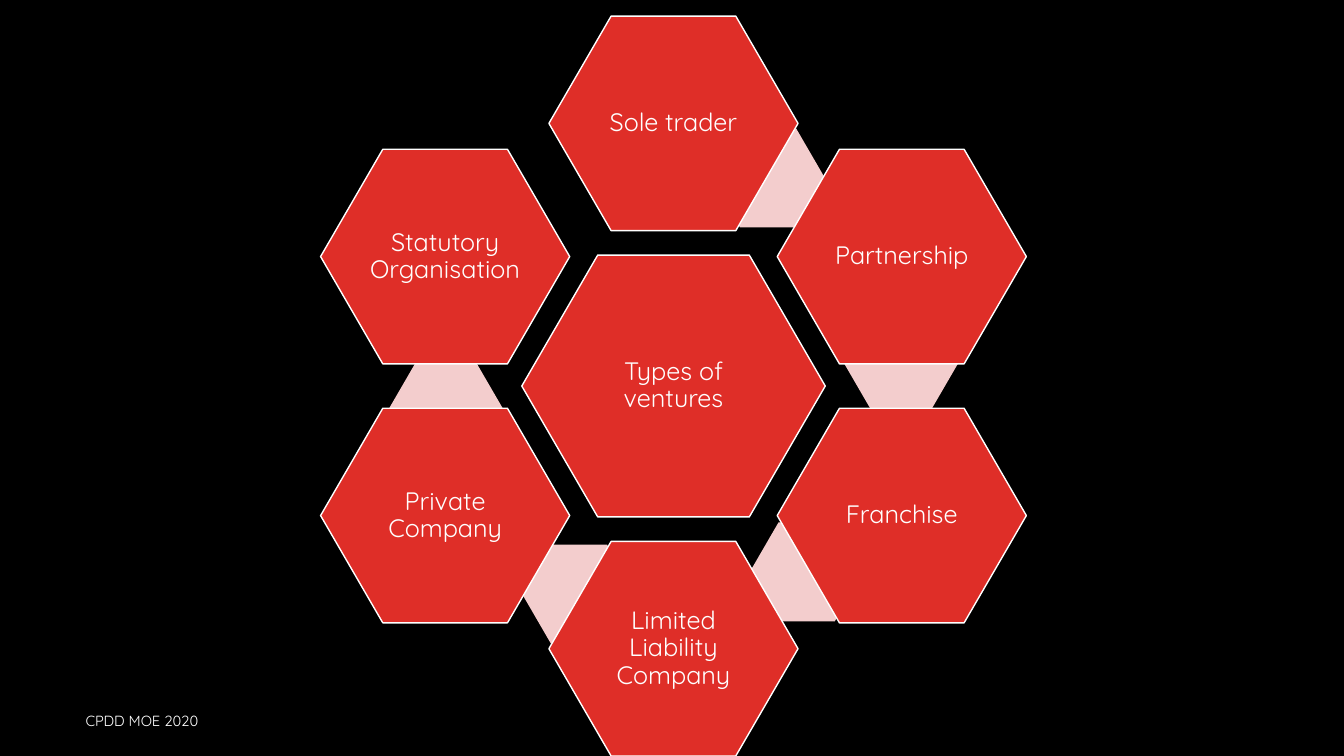
from math import cos, radians, sin

from pptx import Presentation, util as u
from pptx.dml.color import RGBColor
from pptx.enum import shapes, text

WIDE, HIGH = 13.33, 7.5


class Theme:
    back = RGBColor(0, 0, 0)
    red = RGBColor.from_string("DF2E28")
    pink = RGBColor.from_string("F3CDCD")
    white = RGBColor(255, 255, 255)
    font = "Quicksand"
    label = 18
    foot = 10.5


VENTURES = [
    "Sole trader",
    "Partnership",
    "Franchise",
    "Limited Liability Company",
    "Private Company",
    "Statutory Organisation",
]


def write(para, words, size):
    run = para.add_run()
    run.text = words
    run.font.name = Theme.font
    run.font.size = u.Pt(size)
    run.font.color.rgb = Theme.white


def hexagon(group, box, mid, size, fill, words=None):
    left, top, wide, high = box
    x, y = mid[0] - size[0] / 2, mid[1] - size[1] / 2
    shape = group.shapes.add_shape(
        shapes.MSO_SHAPE.HEXAGON,
        u.Inches(left + wide * x / 100), u.Inches(top + high * y / 100),
        u.Inches(wide * size[0] / 100), u.Inches(high * size[1] / 100))
    shape.adjustments[0] = 0.29
    shape.shadow.inherit = False
    shape.fill.solid()
    shape.fill.fore_color.rgb = fill
    if words is None:
        shape.line.fill.background()
        return
    shape.line.color.rgb = Theme.white
    shape.line.width = u.Pt(1)
    frame = shape.text_frame
    frame.word_wrap = True
    frame.vertical_anchor = text.MSO_ANCHOR.MIDDLE
    frame.margin_left = frame.margin_right = u.Inches(0.03)
    frame.margin_top = frame.margin_bottom = u.Inches(0.03)
    para = frame.paragraphs[0]
    para.alignment = text.PP_ALIGN.CENTER
    para.line_spacing = 0.9
    write(para, words, Theme.label)


def ring(slide, box):
    group = slide.shapes.add_group_shape()
    core, cell, link = (43, 35.4), (35.3, 29), (16.1, 13.4)
    across, far, near = (100 - cell[0]) / 2, (100 - cell[1]) / 2, 17.5
    spots = [(0, -far), (across, -near), (across, near),
             (0, far), (-across, near), (-across, -near)]
    hexagon(group, box, (50, 50), core, Theme.red, "Types of ventures")
    for step, (words, (dx, dy)) in enumerate(zip(VENTURES, spots)):
        if step < len(VENTURES) - 1:
            turn = radians(60 * step - 65.6)
            mid = (50 + 32.4 * cos(turn), 50 + 30.9 * sin(turn))
            hexagon(group, box, mid, link, Theme.pink)
        hexagon(group, box, (50 + dx, 50 + dy), cell, Theme.red, words)


def footer(slide, box):
    frame = slide.shapes.add_textbox(*map(u.Inches, box)).text_frame
    frame.word_wrap = True
    frame.vertical_anchor = text.MSO_ANCHOR.MIDDLE
    write(frame.paragraphs[0], "CPDD MOE 2020", Theme.foot)


def main():
    deck = Presentation()
    deck.slide_width, deck.slide_height = u.Inches(WIDE), u.Inches(HIGH)
    slide = deck.slides.add_slide(deck.slide_layouts[6])
    slide.background.fill.solid()
    slide.background.fill.fore_color.rgb = Theme.back
    ring(slide, (3.18, 0.16, 7, 7.34))
    footer(slide, (0.75, 6.95, 8.5, 0.4))
    deck.save("out.pptx")


if __name__ == "__main__":
    main()
